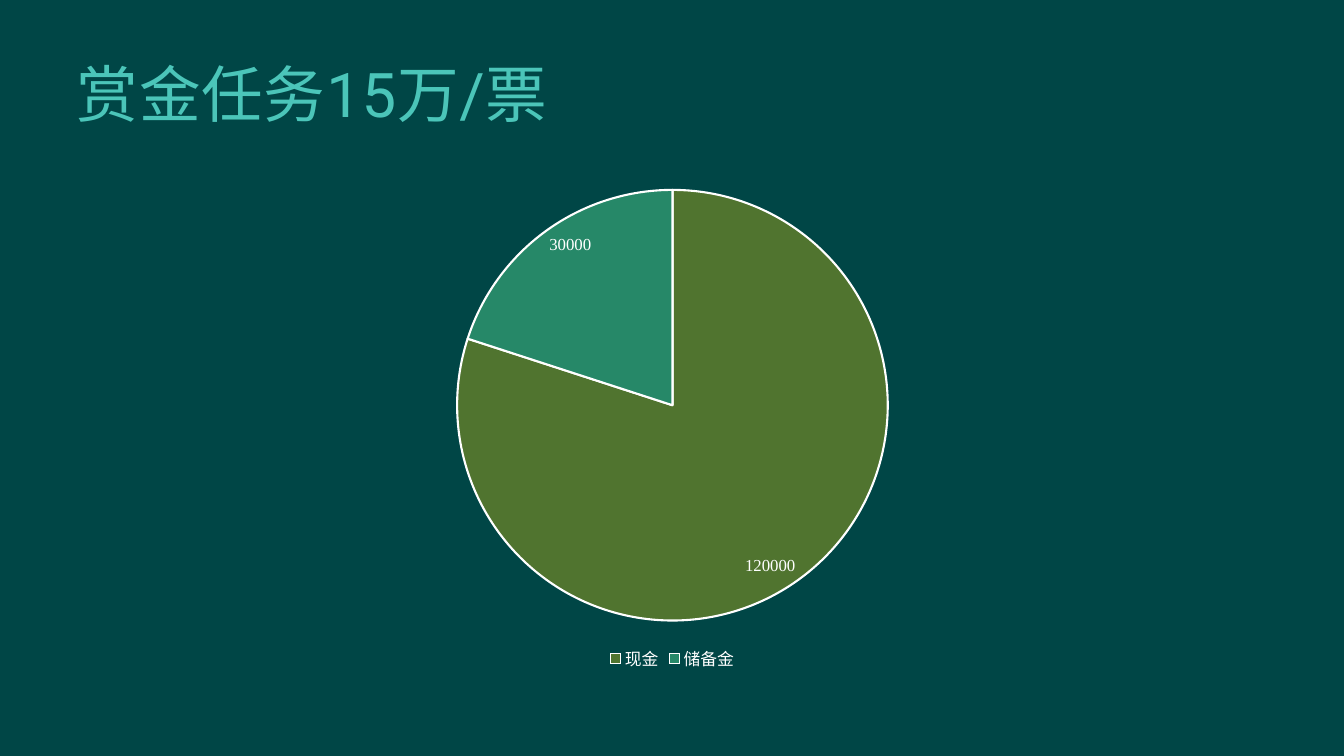
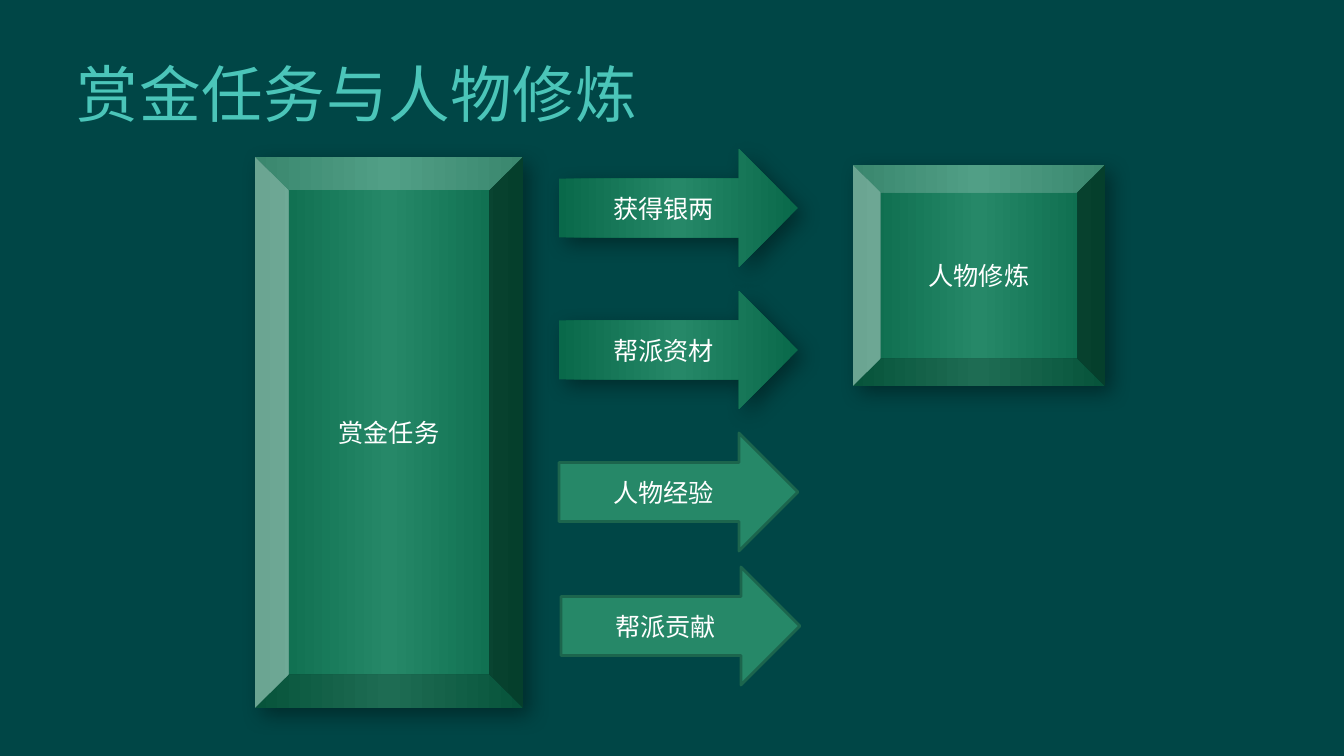
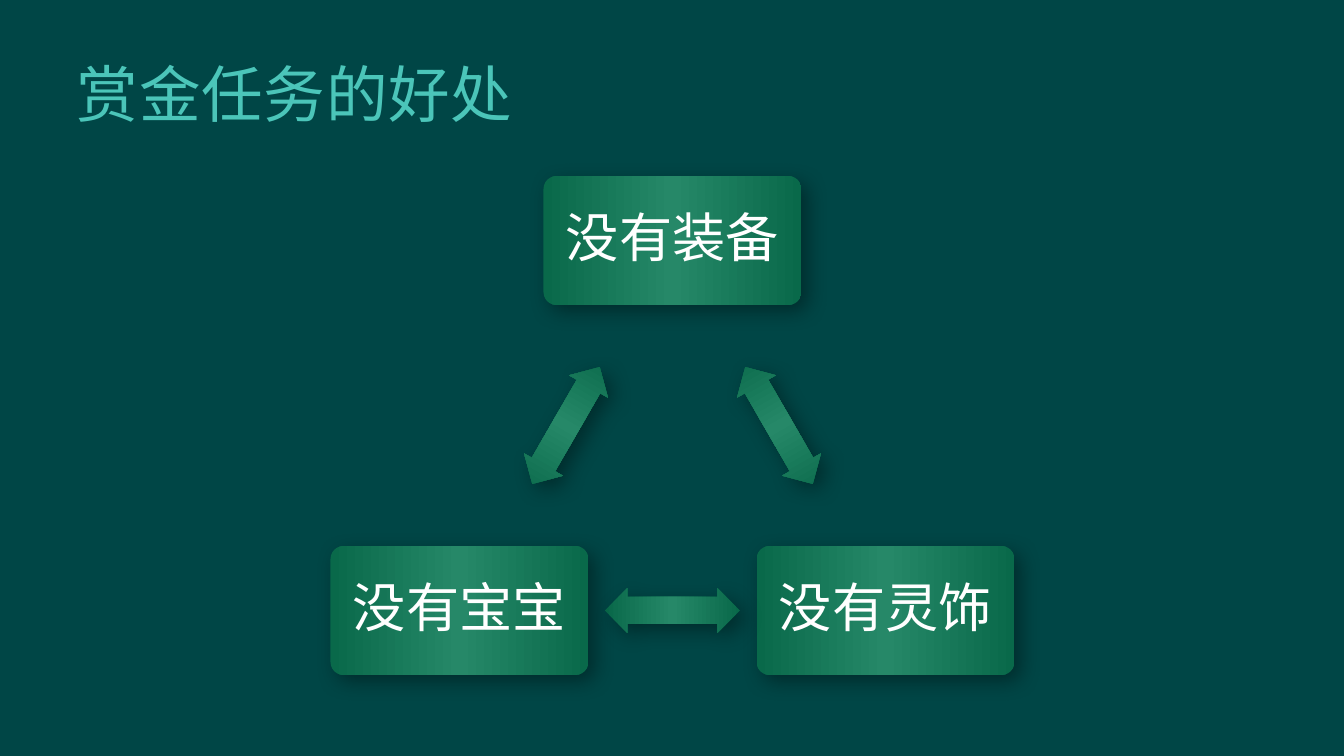
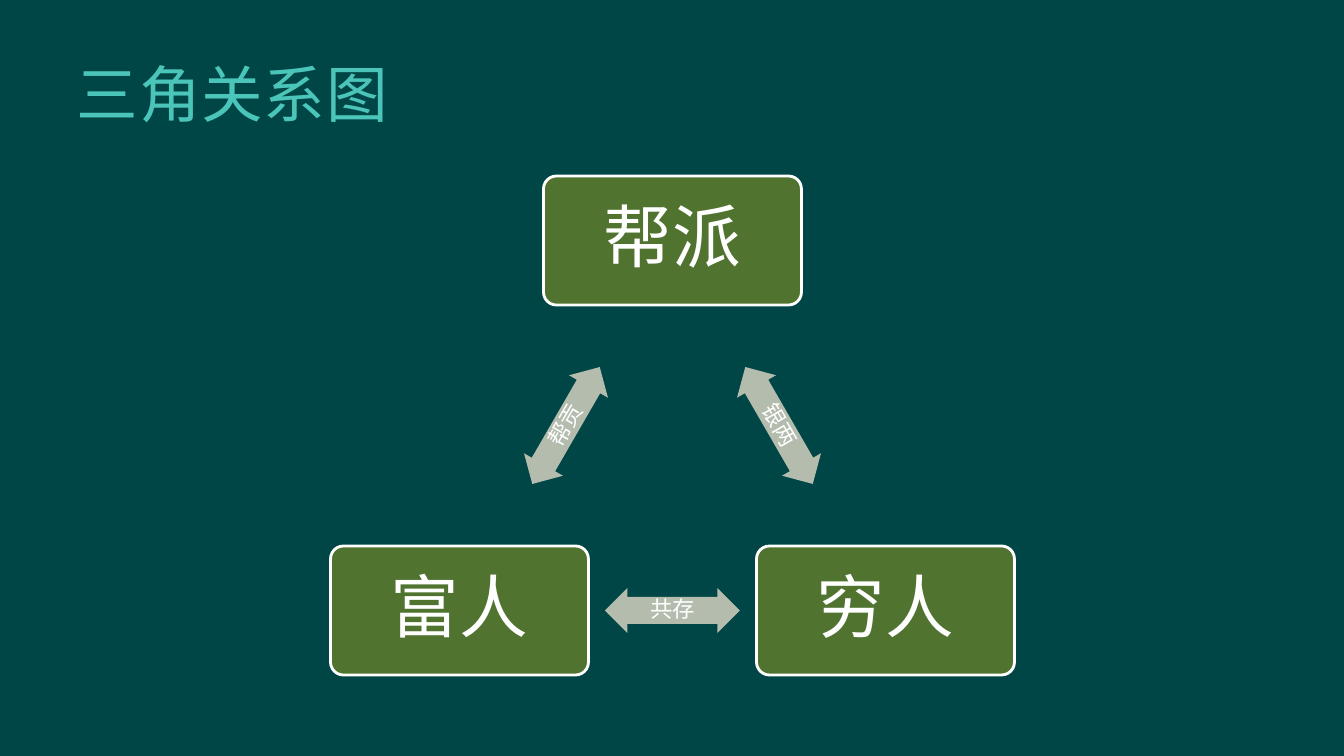
from copy import deepcopy

from lxml import etree
from pptx import Presentation
from pptx import util as u
from pptx.chart import data as chart_data
from pptx.dml import color
from pptx.enum import chart as ch
from pptx.enum import lang, shapes, text
from pptx.oxml import ns

PX = 914400 / 100.8
TITLE_FONT, BODY_FONT = "Roboto", "Times New Roman"
BACKGROUND, TITLE_COLOR, WHITE = "004646", "4BC5B9", "FFFFFF"
OLIVE, GREEN, DEEP_GREEN, EDGE_GREEN, SAGE = "50742F", "268868", "09694A", "1C654D", "B3BCAD"
SHAPE = shapes.MSO_SHAPE


def px(length):
    return u.Emu(round(length * PX))


def rgb(value):
    return color.RGBColor.from_string(value)


def box_emu(box):
    return [px(length) for length in box]


def style_font(font, size, name=BODY_FONT, tint=WHITE):
    font.size, font.name = u.Pt(size), name
    font.color.rgb = rgb(tint)


def add_run(paragraph, words, size, name=BODY_FONT, tint=WHITE):
    run = paragraph.add_run()
    run.text = words
    style_font(run.font, size, name, tint)
    run.font.language_id = lang.MSO_LANGUAGE_ID.SIMPLIFIED_CHINESE
    return run


def glossy(shape):
    shape.fill.gradient()
    shape.fill.gradient_angle = 0
    stop_list = shape.element.spPr.find(".//" + ns.qn("a:gsLst"))
    stop_list.append(deepcopy(stop_list[0]))
    for stop, position, tint in zip(shape.fill.gradient_stops, (0, 0.5, 1),
                                    (DEEP_GREEN, GREEN, DEEP_GREEN)):
        stop.position = position
        stop.color.rgb = rgb(tint)
    shape.line.fill.background()
    effects = shape.element.spPr.find(ns.qn("a:effectLst"))
    shadow = etree.SubElement(effects, ns.qn("a:outerShdw"), blurRad=str(u.Pt(15)),
                              dist=str(u.Pt(6.2)), dir="2700000", algn="tl", rotWithShape="0")
    black = etree.SubElement(shadow, ns.qn("a:srgbClr"), val="000000")
    etree.SubElement(black, ns.qn("a:alpha"), val="36000")


def flat(fill, edge=None):
    def paint(shape):
        shape.fill.solid()
        shape.fill.fore_color.rgb = rgb(fill)
        if edge:
            shape.line.color.rgb = rgb(edge)
            shape.line.width = u.Pt(2)
        else:
            shape.line.fill.background()
    return paint


def add_block(slide, kind, box, paint, adjustments=()):
    block = slide.shapes.add_shape(kind, *box_emu(box))
    block.shadow.inherit = False
    for index, value in enumerate(adjustments):
        block.adjustments[index] = value
    paint(block)
    return block


def add_label(block, words, size, inset=None):
    frame = block.text_frame
    frame.word_wrap = True
    frame.vertical_anchor = text.MSO_ANCHOR.MIDDLE
    paragraph = frame.paragraphs[0]
    paragraph.alignment = text.PP_ALIGN.CENTER
    if inset is not None:
        frame.margin_left = frame.margin_right = px(inset)
        frame.margin_top = frame.margin_bottom = px(inset)
        paragraph.line_spacing = 0.9
        after = etree.SubElement(paragraph._p.get_or_add_pPr(), ns.qn("a:spcAft"))
        etree.SubElement(after, ns.qn("a:spcPct"), val="35000")
    add_run(paragraph, words, size)


def titled_slide(deck, title):
    slide = deck.slides.add_slide(deck.slide_layouts[6])
    slide.background.fill.solid()
    slide.background.fill.fore_color.rgb = rgb(BACKGROUND)
    frame = slide.shapes.add_textbox(*box_emu((67, 30, 1143, 126))).text_frame
    frame.word_wrap = True
    frame.vertical_anchor = text.MSO_ANCHOR.MIDDLE
    run = add_run(frame.paragraphs[0], title, 44, TITLE_FONT, TITLE_COLOR)
    run.font._element.set("spc", "50")
    return slide


def reward_pie(slide, box):
    rewards = chart_data.CategoryChartData()
    rewards.categories = ["现金", "储备金"]
    rewards.add_series("Series 1", (120000, 30000))
    pie = slide.shapes.add_chart(ch.XL_CHART_TYPE.PIE, *box_emu(box), rewards).chart
    style_font(pie.font, 10)
    pie.has_title = False
    pie.has_legend = True
    pie.legend.position = ch.XL_LEGEND_POSITION.BOTTOM
    pie.legend.include_in_layout = False
    style_font(pie.legend.font, 12)
    plot = pie.plots[0]
    plot.vary_by_categories = True
    for index, tint in enumerate((OLIVE, GREEN)):
        slice_format = plot.series[0].points[index].format
        slice_format.fill.solid()
        slice_format.fill.fore_color.rgb = rgb(tint)
        slice_format.line.color.rgb = rgb(WHITE)
        slice_format.line.width = u.Pt(1.5)
    labels = plot.series[0].data_labels
    labels.show_value = True
    labels.position = ch.XL_LABEL_POSITION.INSIDE_END
    style_font(labels.font, 12)


def task_flow(slide, box):
    left, top, width, height = box
    outlined = flat(GREEN, EDGE_GREEN)
    gains = [("获得银两", 304, -8, glossy), ("帮派资材", 304, 134, glossy),
             ("人物经验", 304, 276, outlined), ("帮派贡献", 306, 410, outlined)]
    for words, x, y, paint in gains:
        arrow = add_block(slide, SHAPE.RIGHT_ARROW, (left + x, top + y, 239, 118), paint)
        add_label(arrow, words, 18)
    task = add_block(slide, SHAPE.BEVEL, (left, top, 268, height), glossy)
    add_label(task, "赏金任务", 18)
    training = add_block(slide, SHAPE.BEVEL, (left + width - 252, top + 8, 252, 221), glossy)
    add_label(training, "人物修炼", 18)


def triangle(slide, box, nodes, node_size, inset, node_paint, link_paint, links=("", "", "")):
    left, top, width, height = box
    node_w, node_h, link_w, link_h, spread = 258, 129, 135, 45, 213
    middle, low = left + width / 2, top + height - node_h / 2
    centers = [(middle, top + node_h / 2), (middle + spread, low), (middle - spread, low)]
    for index, angle in enumerate((60, 0, 300)):
        x, y = centers[index]
        next_x, next_y = centers[(index + 1) % 3]
        node = add_block(slide, SHAPE.ROUNDED_RECTANGLE,
                         (x - node_w / 2, y - node_h / 2, node_w, node_h), node_paint, (0.1,))
        add_label(node, nodes[index], node_size, inset)
        link = add_block(slide, SHAPE.LEFT_RIGHT_ARROW,
                         ((x + next_x - link_w) / 2, (y + next_y - link_h) / 2, link_w, link_h),
                         link_paint, (0.6, 0.5))
        link.rotation = angle
        if links[index]:
            add_label(link, links[index], 16, 0)


def main():
    deck = Presentation()
    deck.slide_width, deck.slide_height = px(1344), px(756)
    content = (219, 176, 907, 499)
    reward_pie(titled_slide(deck, "赏金任务15万/票"), content)
    task_flow(titled_slide(deck, "赏金任务与人物修炼"), (255, 157, 850, 551))
    triangle(titled_slide(deck, "赏金任务的好处"), content,
             ("没有装备", "没有灵饰", "没有宝宝"), 38, 16, glossy, glossy)
    triangle(titled_slide(deck, "三角关系图"), content, ("帮派", "穷人", "富人"), 49, 20,
             flat(OLIVE, WHITE), flat(SAGE), ("银两", "共存", "帮贡"))
    deck.save("out.pptx")


if __name__ == "__main__":
    main()
